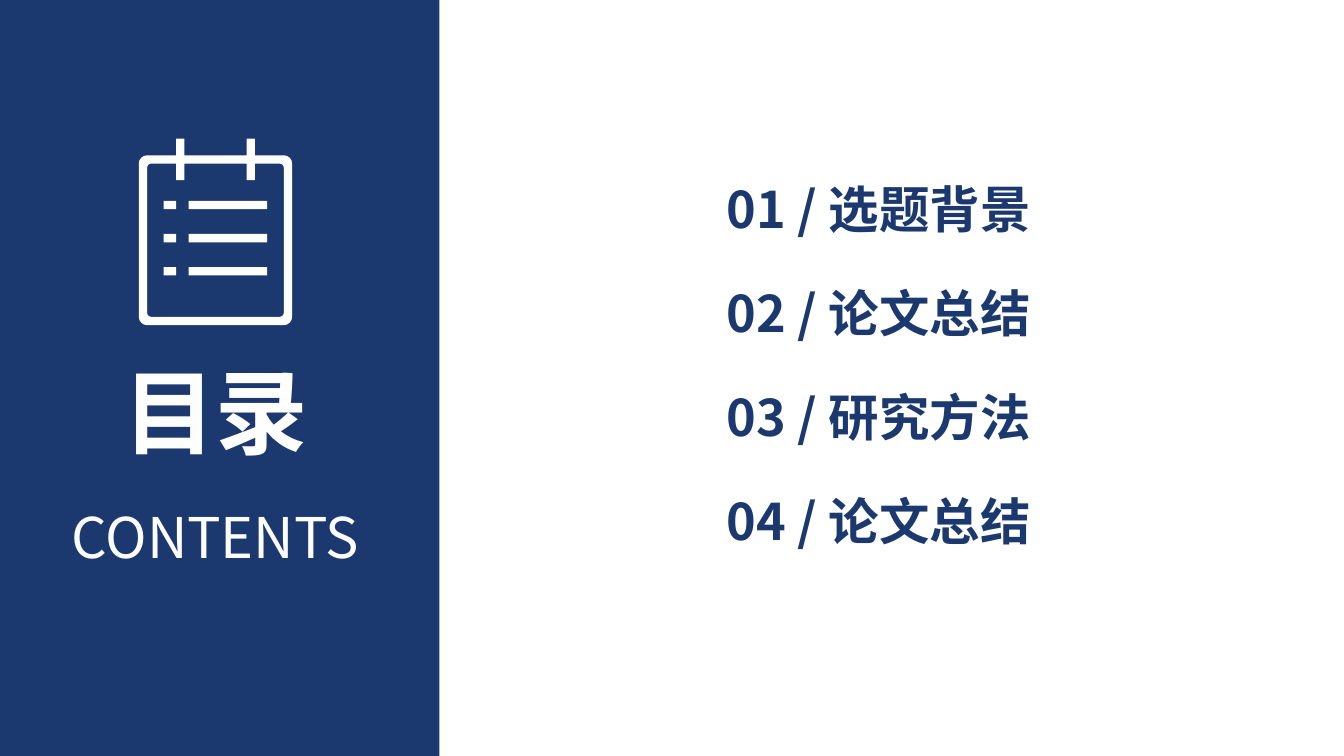
from dataclasses import dataclass
from math import cos, radians, sin

from lxml.etree import SubElement as Sub
from pptx import Presentation as Deck
from pptx.dml.color import RGBColor as Color
from pptx.enum.shapes import MSO_SHAPE as Form
from pptx.enum.text import MSO_ANCHOR as Anchor
from pptx.enum.text import MSO_AUTO_SIZE as Fit
from pptx.enum.text import PP_ALIGN as Align
from pptx.oxml.ns import qn
from pptx.util import Inches, Pt


@dataclass(frozen=True)
class Theme:
    navy: Color = Color.from_string("1C396F")
    white: Color = Color.from_string("FEFEFE")
    face: str = "Noto Sans CJK SC"
    head: int = 66
    sub: int = 40
    item: int = 36
    gap: int = 31


THEME = Theme()
WIDE, HIGH = Inches(13.33), Inches(7.5)
CELL = HIGH / 182.5
FINE = 100
TOPICS = ["选题背景", "论文总结", "研究方法", "论文总结"]


def share(left, top, width, height):
    sides = (WIDE, HIGH, WIDE, HIGH)
    return [round(part * side / 100)
            for part, side in zip((left, top, width, height), sides)]


def place(shape, area):
    shape.left, shape.top, shape.width, shape.height = share(*area)


def paint(shape, color):
    shape.shadow.inherit = False
    shape.fill.solid()
    shape.fill.fore_color.rgb = color
    shape.line.fill.background()


def frame(shape):
    text = shape.text_frame
    text.word_wrap = True
    text.auto_size = Fit.NONE
    text.vertical_anchor = Anchor.TOP
    return text


def write(para, text, size, color, bold=False):
    run = para.add_run()
    run.text = text
    font = run.font
    font.name, font.size, font.bold = THEME.face, Pt(size), bold
    font.color.rgb = color
    Sub(font._element, qn("a:ea"), typeface=THEME.face)


def label(shape, area, text, size, bold=False):
    place(shape, area)
    para = frame(shape).paragraphs[0]
    para.alignment = Align.CENTER
    write(para, text, size, THEME.white, bold)


def agenda(body, area, topics):
    place(body, area)
    text = frame(body)
    for num, topic in enumerate(topics, 1):
        para = text.paragraphs[0] if num == 1 else text.add_paragraph()
        props = para._p.get_or_add_pPr()
        props.set("marL", "0")
        props.set("indent", "0")
        Sub(props, qn("a:buNone"))
        para.alignment = Align.LEFT
        para.space_before = Pt(THEME.gap if num > 1 else 0)
        write(para, f"{num:02d} / {topic}", THEME.item, THEME.navy, True)


def arc(mid_x, mid_y, bend, start):
    turns = [radians(start + step * 22.5) for step in range(5)]
    return [(mid_x + bend * cos(turn), mid_y + bend * sin(turn))
            for turn in turns]


def page(left, top, right, base, bend, tip):
    pins = [spot for a, b in ((9, 11), (26, 28))
            for spot in ((a, top), (a, tip), (b, tip), (b, top))]
    return (arc(left + bend, top + bend, bend, 180) + pins
            + arc(right - bend, top + bend, bend, 270)
            + arc(right - bend, base - bend, bend, 0)
            + arc(left + bend, base - bend, bend, 90))


def bar(left, right, top):
    return [(left, top), (right, top), (right, top + 2), (left, top + 2)]


def notepad(shapes, left, top):
    loops = [page(0, 4, 37, 45, 2, 0), page(2, 6, 35, 43, 1, 10)]
    loops += [bar(a, b, row) for row in (15, 23, 31)
              for a, b in ((6, 9), (12, 31))]
    loops = [[(x * FINE, y * FINE) for x, y in loop] for loop in loops]
    pen = shapes.build_freeform(*loops[0][0], scale=CELL / FINE)
    for loop in loops:
        if loop is not loops[0]:
            pen.move_to(*loop[0])
        pen.add_line_segments(loop[1:], close=True)
    x, y = share(left, top, 0, 0)[:2]
    paint(pen.convert_to_shape(x, y), THEME.white)


def main():
    deck = Deck()
    deck.slide_width, deck.slide_height = WIDE, HIGH
    slide = deck.slides.add_slide(deck.slide_layouts[1])
    shapes = slide.shapes
    title, body = slide.placeholders
    panel = shapes.add_shape(Form.RECTANGLE, *share(0, 0, 32.7, 100))
    paint(panel, THEME.navy)
    shapes._spTree.insert(2, panel._element)
    notepad(shapes, 10.33, 18.35)
    label(title, (7.98, 46.27, 16.13, 16.13), "目录", THEME.head, True)
    under = shapes.add_textbox(0, 0, 0, 0)
    label(under, (2.25, 65.8, 27.53, 10.27), "CONTENTS", THEME.sub)
    agenda(body, (53.34, 22.93, 25.43, 50.67), TOPICS)
    deck.save("out.pptx")


if __name__ == "__main__":
    main()
